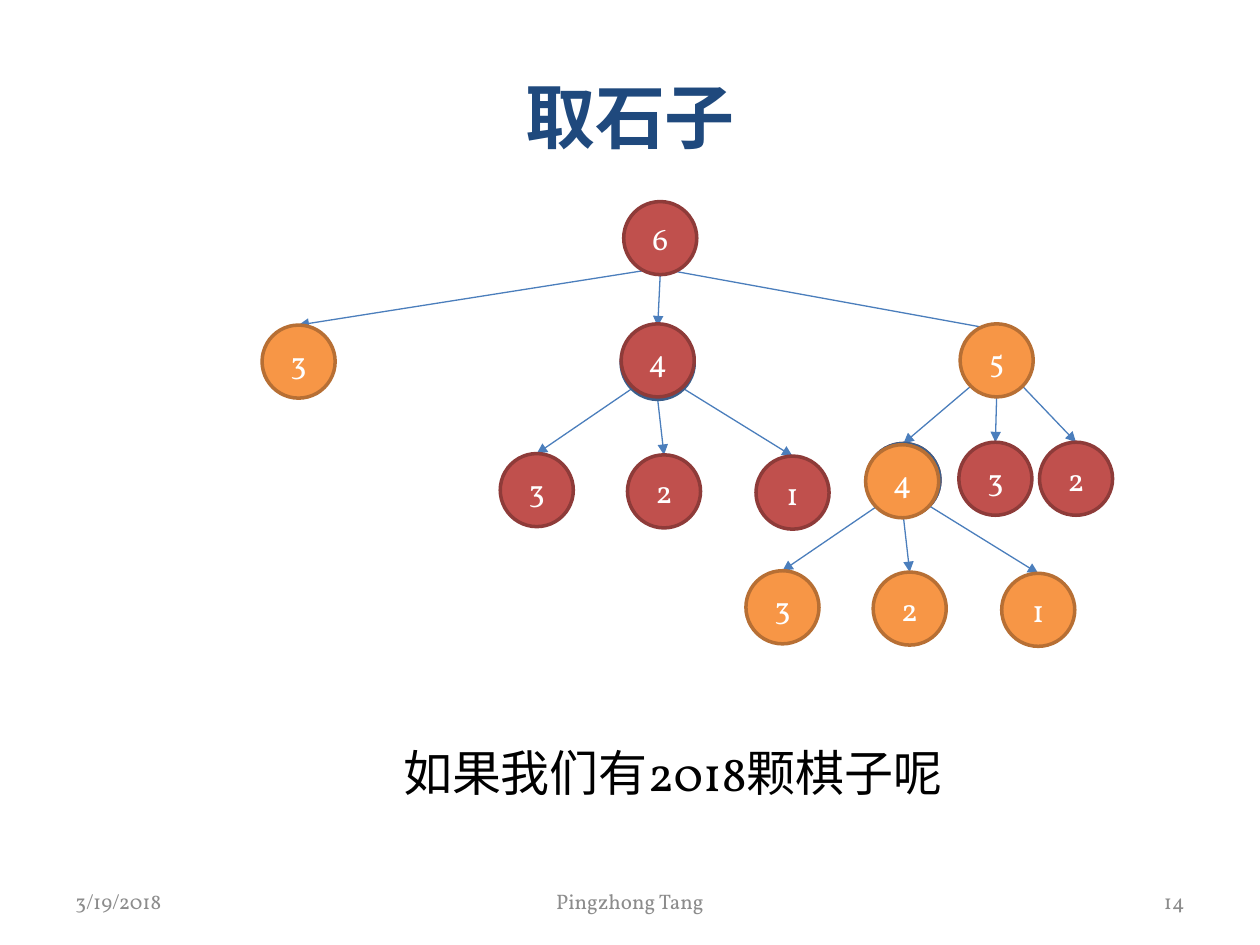
from lxml import etree
from pptx import Presentation
from pptx import util as u
from pptx.dml.color import RGBColor
from pptx.enum import shapes, text
from pptx.oxml.ns import qn

prs = Presentation()
prs.slide_width, prs.slide_height = u.Inches(10), u.Inches(7.5)
COL, ROW = prs.slide_width / 100, prs.slide_height / 75
FONT = "Vollkorn"
RED, ORANGE, BLUE = ("C0504D", "8E3B39"), ("F79646", "B76F34"), ("4F81BD", "3A5F8C")
DISC, SIDE = 5.8, 2.05
TOP, TOP_RIGHT = (0, -DISC / 2), (SIDE, -SIDE)
FORK = [(-SIDE, SIDE), (0, DISC / 2), (SIDE, SIDE)]
LEFT, CENTER, RIGHT = text.PP_ALIGN.LEFT, text.PP_ALIGN.CENTER, text.PP_ALIGN.RIGHT


def color(value):
    return RGBColor.from_string(value)


def grid(x, y, *size):
    return [int(n * unit) for n, unit in zip((x, y, *size), (COL, ROW, COL, ROW))]


def write(sp, words, size, ink, align=CENTER, bold=False, anchor=text.MSO_ANCHOR.MIDDLE):
    tf = sp.text_frame
    tf.text = words
    tf.word_wrap = True
    tf.vertical_anchor = anchor
    p = tf.paragraphs[0]
    p.alignment = align
    f = p.runs[0].font
    f.name, f.size, f.bold = FONT, u.Pt(size), bold
    f.color.rgb = color(ink)


def label(s, box, words, size, ink, align=CENTER, anchor=text.MSO_ANCHOR.MIDDLE):
    sp = s.shapes.add_textbox(*grid(*box))
    write(sp, words, size, ink, align, anchor=anchor)
    return sp


def title(s, box, words):
    sp = s.shapes.title
    sp.left, sp.top, sp.width, sp.height = grid(*box)
    write(sp, words, 40, "1F497D", bold=True)


def shift(point, step):
    return point[0] + step[0], point[1] + step[1]


def node(s, center, words, paint):
    x, y = shift(center, (-DISC / 2, -DISC / 2))
    sp = s.shapes.add_shape(shapes.MSO_SHAPE.OVAL, *grid(x, y, DISC, DISC))
    sp.shadow.inherit = False
    sp.fill.solid()
    sp.fill.fore_color.rgb = color(paint[0])
    sp.line.color.rgb = color(paint[1])
    sp.line.width = u.Pt(2)
    write(sp, words, 18, "FFFFFF")


def arrow(s, start, end):
    c = s.shapes.add_connector(shapes.MSO_CONNECTOR.STRAIGHT, *grid(*start), *grid(*end))
    c.line.color.rgb = color("4B7EBC")
    c.line.width = u.Pt(0.75)
    etree.SubElement(c.line._get_or_add_ln(), qn("a:tailEnd"), type="triangle")
    etree.SubElement(c._element.spPr, qn("a:effectLst"))


def branch(s, parent, steps, words, paint):
    for fork, step, word in zip(FORK, steps, words):
        child = shift(parent, step)
        arrow(s, shift(parent, fork), shift(child, TOP))
        node(s, child, word, paint)


def four(s, center, cover, paint):
    branch(s, center, [(-9.6, 10.1), (0.5, 10.2), (10.7, 10.3)], "321", paint)
    node(s, center, "4", BLUE)
    node(s, shift(center, cover), "4", paint)


def game_tree(s, box):
    origin = box[:2]
    six, three, mid, five = (
        shift(origin, at) for at in [(31.6, 2.9), (2.9, 12.7), (31.4, 12.8), (58.3, 12.6)])
    low_left, low, low_right = (shift(six, fork) for fork in FORK)
    arrow(s, low_left, shift(five, TOP_RIGHT))
    arrow(s, low, shift(mid, TOP))
    arrow(s, low_right, shift(three, TOP))
    node(s, three, "3", ORANGE)
    four(s, mid, (0, -0.2), RED)
    steps = [(-7.4, 9.5), (-0.1, 9.4), (6.3, 9.4)]
    branch(s, five, steps, "432", RED)
    four(s, shift(five, steps[0]), (-0.1, 0.1), ORANGE)
    node(s, five, "5", ORANGE)
    node(s, six, "6", RED)


def question(s, box, words):
    sp = label(s, box, words, 28, "000000", anchor=text.MSO_ANCHOR.TOP)
    sp.text_frame.auto_size = text.MSO_AUTO_SIZE.SHAPE_TO_FIT_TEXT


def footer(s, box):
    x, y, w, h = box
    parts = [("3/19/2018", x, 23.3, LEFT),
             ("Pingzhong Tang", x + (w - 31.7) / 2, 31.7, CENTER),
             ("14", x + w - 23.3, 23.3, RIGHT)]
    for words, left, width, align in parts:
        label(s, (left, y, width, h), words, 12, "8C8C8C", align)


def main():
    s = prs.slides.add_slide(prs.slide_layouts[5])
    title(s, (5, 2.9, 90, 12.5), "取石子")
    footer(s, (5, 69.5, 90, 4))
    game_tree(s, (20.8, 16, 67.5, 35.3))
    question(s, (30.8, 58.4, 45.2, 5.7), "如果我们有2018颗棋子呢")
    prs.save("out.pptx")


if __name__ == "__main__":
    main()
